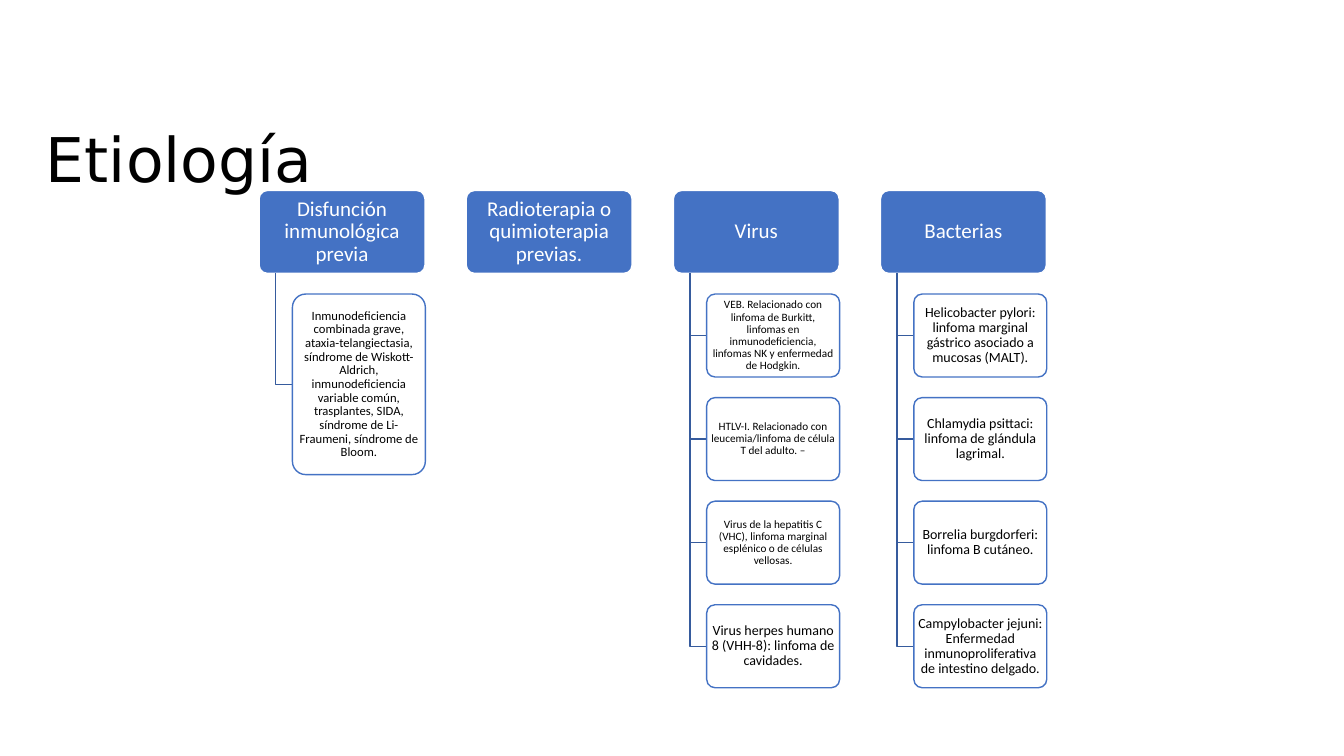
import pptx
import pptx.util
import pptx.dml.color
import pptx.enum.shapes
import pptx.enum.text
import pptx.oxml.ns
import lxml.etree

Cm = pptx.util.Cm
Pt = pptx.util.Pt
WHITE = pptx.dml.color.RGBColor(0xFF, 0xFF, 0xFF)
BLACK = pptx.dml.color.RGBColor(0x00, 0x00, 0x00)
BLUE = pptx.dml.color.RGBColor(0x44, 0x72, 0xC4)
DARK_BLUE = pptx.dml.color.RGBColor(0x36, 0x5B, 0x9D)

# Hierarchy layout, in centimetres
FIRST_LEFT, COLUMN_STEP = 6.53, 5.22
HEADER_TOP, HEADER_WIDTH, BOX_HEIGHT = 4.8, 4.18, 2.09
HEADER_BOTTOM = HEADER_TOP + BOX_HEIGHT
DETAIL_TOP, DETAIL_STEP = 7.41, 2.61
STEM_INDENT, DETAIL_INDENT, DETAIL_WIDTH = 0.42, 0.84, 3.35
TALL_HEIGHT = 4.55

# Each cause: heading, height of its detail boxes, (text, font size)
CAUSES = [
    ("Disfunción inmunológica previa", TALL_HEIGHT, [
        ("Inmunodeficiencia combinada grave, ataxia-telangiectasia, síndrome de "
         "Wiskott-Aldrich, inmunodeficiencia variable común, trasplantes, SIDA, "
         "síndrome de Li-Fraumeni, síndrome de Bloom.", 9),
    ]),
    ("Radioterapia o quimioterapia previas.", BOX_HEIGHT, []),
    ("Virus", BOX_HEIGHT, [
        ("VEB. Relacionado con linfoma de Burkitt, linfomas en inmunodeficiencia, "
         "linfomas NK y enfermedad de Hodgkin.", 8),
        ("HTLV-I. Relacionado con leucemia/linfoma de célula T del adulto. –", 8),
        ("Virus de la hepatitis C (VHC), linfoma marginal esplénico o de células "
         "vellosas.", 8),
        ("Virus herpes humano 8 (VHH-8): linfoma de cavidades.", 10),
    ]),
    ("Bacterias", BOX_HEIGHT, [
        ("Helicobacter pylori: linfoma marginal gástrico asociado a mucosas (MALT).", 10),
        ("Chlamydia psittaci: linfoma de glándula lagrimal.", 10),
        ("Borrelia burgdorferi: linfoma B cutáneo.", 10),
        ("Campylobacter jejuni: Enfermedad inmunoproliferativa de intestino delgado.", 10),
    ]),
]

presentation = pptx.Presentation()
presentation.slide_width = Cm(33.87)
presentation.slide_height = Cm(19.05)
slide = presentation.slides.add_slide(presentation.slide_layouts[6])


def write_text(shape, text, font_name, size, color):
    frame = shape.text_frame
    frame.word_wrap = True
    frame.vertical_anchor = pptx.enum.text.MSO_ANCHOR.MIDDLE
    paragraph = frame.paragraphs[0]
    paragraph.text = text
    paragraph.line_spacing = 0.9
    paragraph.font.name = font_name
    paragraph.font.size = Pt(size)
    paragraph.font.color.rgb = color
    return paragraph


def add_box(left, top, width, height, fill, line, text, size, color, inset):
    shape = slide.shapes.add_shape(
        pptx.enum.shapes.MSO_SHAPE.ROUNDED_RECTANGLE,
        Cm(left), Cm(top), Cm(width), Cm(height))
    shape.adjustments[0] = 0.1
    shape.shadow.inherit = False
    shape.fill.solid()
    shape.fill.fore_color.rgb = fill
    shape.line.color.rgb = line
    shape.line.width = Pt(1)
    frame = shape.text_frame
    frame.margin_left = frame.margin_right = Cm(inset)
    frame.margin_top = frame.margin_bottom = Cm(inset / 2)
    paragraph = write_text(shape, text, "Calibri", size, color)
    paragraph.alignment = pptx.enum.text.PP_ALIGN.CENTER
    return shape


# Title
title = slide.shapes.add_textbox(Cm(0.91), Cm(2.26), Cm(21.51), Cm(3.68))
write_text(title, "Etiología", "DejaVu Sans", 44, BLACK)

# Causes, one column each
for column, (heading, detail_height, details) in enumerate(CAUSES):
    left = FIRST_LEFT + column * COLUMN_STEP
    add_box(left, HEADER_TOP, HEADER_WIDTH, BOX_HEIGHT,
            BLUE, WHITE, heading, 15, WHITE, 0.08)

    for row, (text, size) in enumerate(details):
        top = DETAIL_TOP + row * DETAIL_STEP
        stem_x = Cm(left + STEM_INDENT)
        detail_x = Cm(left + DETAIL_INDENT)
        middle_y = Cm(top + detail_height / 2)

        # Right-angled branch from the heading to the detail
        builder = slide.shapes.build_freeform(stem_x, Cm(HEADER_BOTTOM))
        builder.add_line_segments([(stem_x, middle_y), (detail_x, middle_y)], close=False)
        branch = builder.convert_to_shape()
        branch.shadow.inherit = False
        branch.fill.background()
        branch.line.color.rgb = DARK_BLUE
        branch.line.width = Pt(1)

        # Detail box, slightly transparent
        detail = add_box(left + DETAIL_INDENT, top, DETAIL_WIDTH, detail_height,
                         WHITE, BLUE, text, size, BLACK, 0.05)
        fill_color = detail.element.spPr.find(
            pptx.oxml.ns.qn("a:solidFill")).find(pptx.oxml.ns.qn("a:srgbClr"))
        lxml.etree.SubElement(fill_color, pptx.oxml.ns.qn("a:alpha"), val="90000")

presentation.save("out.pptx")
